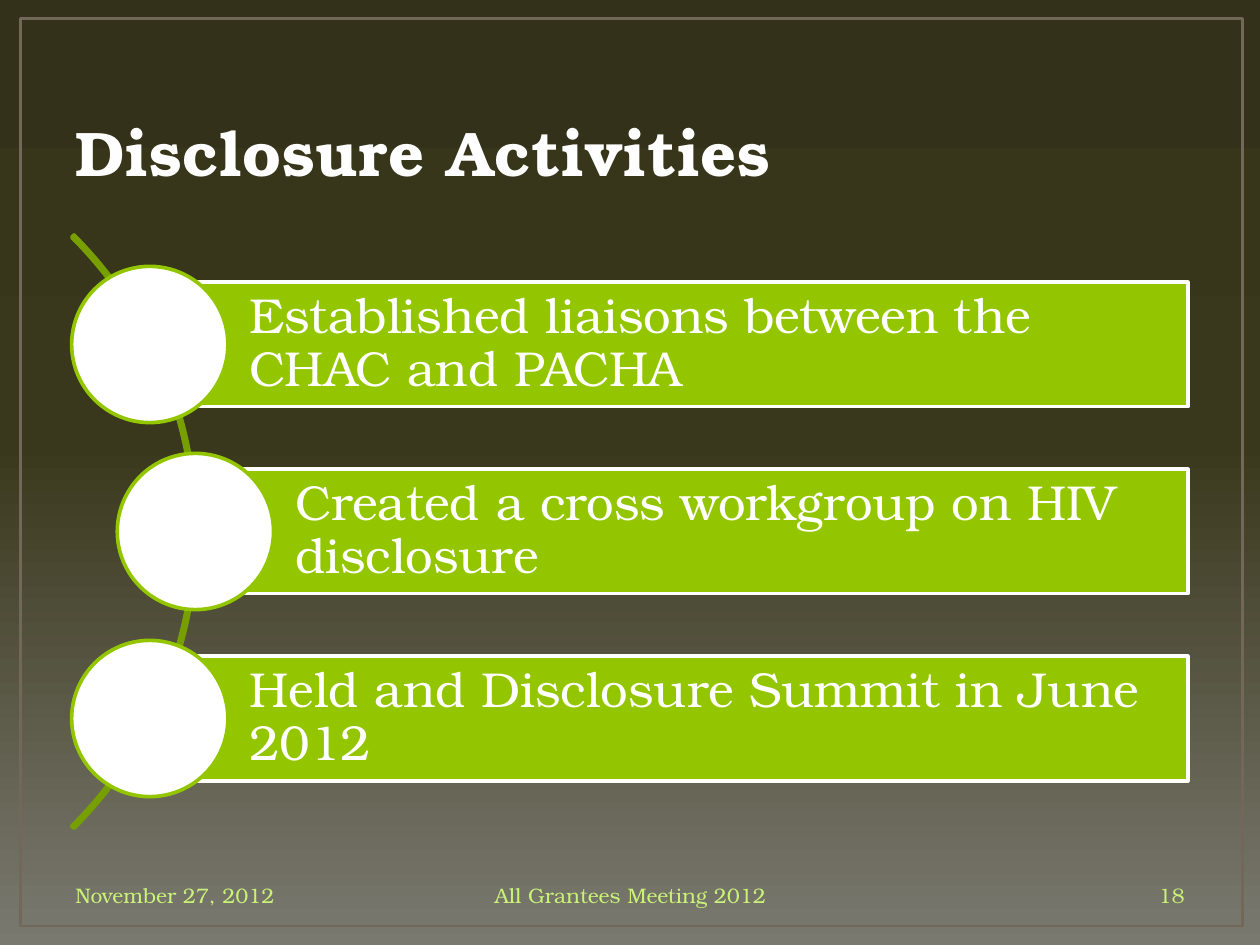
from copy import deepcopy

from pptx import Presentation
from pptx.dml.color import RGBColor
from pptx.enum.shapes import MSO_SHAPE
from pptx.enum.text import MSO_ANCHOR, PP_ALIGN
from pptx.util import Cm, Pt

TITLE = "Disclosure Activities"
ACTIVITIES = [
    ("Established liaisons between the CHAC and PACHA", 3.02),
    ("Created a cross workgroup on HIV disclosure", 3.94),
    ("Held and Disclosure Summit in June 2012", 3.02),
]
FOOTERS = [
    ("November 27, 2012", 1.27, 5.92, PP_ALIGN.LEFT),
    ("All Grantees Meeting 2012", 7.87, 9.68, PP_ALIGN.CENTER),
    ("18", 18.21, 5.92, PP_ALIGN.RIGHT),
]
THEME = {
    "font": "TeX Gyre Bonum",
    "title_size": 36,
    "bar_size": 28,
    "footer_size": 12,
    "white": "FFFFFF",
    "title": "FFFEFE",
    "green": "94C600",
    "arc": "779F00",
    "footer": "CAF278",
    "border": "71685A",
    "background": [(0, "7A7970"), (0.53, "3A381C"), (1, "333119")],
}
BAR_RIGHT, BAR_TOP, BAR_HEIGHT, BAR_PITCH = 23.95, 5.69, 2.51, 3.77
CIRCLE = 3.15
LINE_WIDTH = 2.08


def color(name):
    return RGBColor.from_string(THEME[name])


def write_text(shape, text, size, fill, align=PP_ALIGN.LEFT, anchor=MSO_ANCHOR.MIDDLE,
               bold=False, line_spacing=None, letter_spacing=None, insets=None):
    frame = shape.text_frame
    frame.word_wrap = True
    frame.vertical_anchor = anchor
    if insets:
        frame.margin_left, frame.margin_top, frame.margin_right, frame.margin_bottom = map(Cm, insets)
    paragraph = frame.paragraphs[0]
    paragraph.alignment = align
    paragraph.line_spacing = line_spacing
    run = paragraph.add_run()
    run.text = text
    run.font.name = THEME["font"]
    run.font.size = Pt(THEME[size])
    run.font.bold = bold
    run.font.color.rgb = color(fill)
    if letter_spacing:
        run.font._element.set("spc", str(int(letter_spacing * 100)))


def draw_shape(slide, preset, box, line, width, fill=None):
    shape = slide.shapes.add_shape(preset, *map(Cm, box))
    shape.shadow.inherit = False
    if fill:
        shape.fill.solid()
        shape.fill.fore_color.rgb = color(fill)
    else:
        shape.fill.background()
    shape.line.color.rgb = color(line)
    shape.line.width = Pt(width)
    return shape


def paint_background(slide):
    fill = slide.background.fill
    fill.gradient()
    fill.gradient_angle = 90
    first = fill.gradient_stops[0]._gs
    first.addnext(deepcopy(first))
    for stop, (position, value) in zip(fill.gradient_stops, THEME["background"]):
        stop.position = position
        stop.color.rgb = RGBColor.from_string(value)


def add_activities(slide):
    arc = draw_shape(slide, MSO_SHAPE.BLOCK_ARC, (-12.95, 2.26, 16.92, 16.92), "arc", LINE_WIDTH)
    for index, value in enumerate((189, 27, 0.004)):
        arc.adjustments[index] = value
    for index, (text, left) in enumerate(ACTIVITIES):
        top = BAR_TOP + index * BAR_PITCH
        bar = draw_shape(slide, MSO_SHAPE.RECTANGLE, (left, top, BAR_RIGHT - left, BAR_HEIGHT),
                         "white", LINE_WIDTH, fill="green")
        write_text(bar, text, "bar_size", "white", line_spacing=0.9, insets=(2.01, 0.2, 0.2, 0.2))
        circle_top = top + (BAR_HEIGHT - CIRCLE) / 2
        draw_shape(slide, MSO_SHAPE.OVAL, (left - CIRCLE / 2, circle_top, CIRCLE, CIRCLE),
                   "green", LINE_WIDTH, fill="white")


def main():
    presentation = Presentation()
    presentation.slide_width, presentation.slide_height = Cm(25.4), Cm(19.05)
    slide = presentation.slides.add_slide(presentation.slide_layouts[5])
    paint_background(slide)
    draw_shape(slide, MSO_SHAPE.RECTANGLE, (0.41, 0.38, 24.64, 18.29), "border", 1.5)

    title = slide.shapes.title
    title.left, title.top, title.width, title.height = map(Cm, (1.27, 0.76, 22.86, 3.18))
    write_text(title, TITLE, "title_size", "title", anchor=MSO_ANCHOR.BOTTOM,
               bold=True, letter_spacing=0.5)
    add_activities(slide)
    for text, left, width, align in FOOTERS:
        footer = slide.shapes.add_textbox(Cm(left), Cm(17.53), Cm(width), Cm(1.02))
        write_text(footer, text, "footer_size", "footer", align=align)
    presentation.save("out.pptx")


if __name__ == "__main__":
    main()
